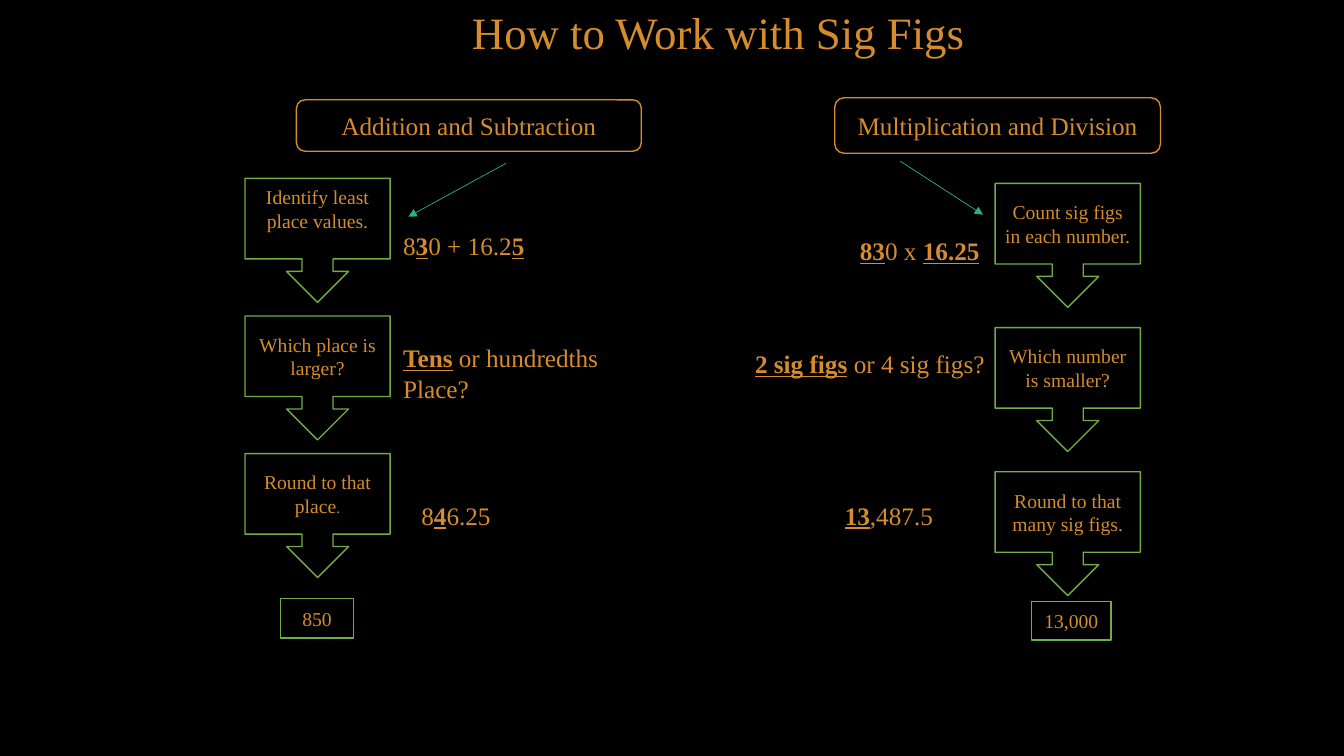
from lxml import etree
from pptx import Presentation
from pptx.dml.color import RGBColor
from pptx.enum import shapes, text
from pptx.oxml import ns
from pptx.util import Inches, Pt

FONT = "Times New Roman"
BLACK, ORANGE, GREEN, TEAL = "000000", "D58C2E", "70AD47", "29AF8C"
KEY, SMALL = "key", "small"  # key digits are bold and underlined

TITLE = "How to Work with Sig Figs"
STEP_WIDTH, STEP_HEIGHT = 1.44, 1.23

# A text is a list of lines, a line a list of (words, style) runs.
# Boxes are (left, top, width, height) in inches.
COLUMNS = [
    {
        "heading": ("Addition and Subtraction", (2.94, 0.99, 3.42, 0.51)),
        "arrow": (5.02, 1.62, 4.05, 2.15),
        "first_step": (2.43, 1.77),
        "pitch": 1.365,
        "steps": [
            [("Identify least place values.", None)],
            [("Which place is larger?", None)],
            [("Round to that place", None), (".", SMALL)],
        ],
        "first_step_lift": 0.2,
        "examples": [
            ((3.9, 2.24, 1.57, 0.4),
             [[("8", None), ("3", KEY), ("0 + 16.2", None), ("5", KEY)]]),
            ((3.9, 3.35, 2.43, 0.71),
             [[("Tens", KEY), (" or hundredths", None)], [("Place?", None)]]),
            ((4.08, 4.91, 1.58, 0.4),
             [[("8", None), ("4", KEY), ("6.25", None)]]),
        ],
        "answer": ("850", (2.78, 5.94, 0.73, 0.39)),
    },
    {
        "heading": ("Multiplication and Division", (8.28, 0.97, 3.23, 0.55)),
        "arrow": (8.93, 1.6, 9.75, 2.13),
        "first_step": (9.87, 1.82),
        "pitch": 1.43,
        "steps": [
            [("Count sig figs in each number.", None)],
            [("Which number is smaller?", None)],
            [("Round to that many sig figs.", None)],
        ],
        "first_step_lift": 0,
        "examples": [
            ((8.43, 2.29, 1.41, 0.4),
             [[("83", KEY), ("0 x ", None), ("16.25", KEY)]]),
            ((7.39, 3.41, 2.48, 0.4),
             [[("2 sig figs", KEY), (" or 4 sig figs?", None)]]),
            ((8.28, 4.91, 1.45, 0.4),
             [[("13", KEY), (",487.5", None)]]),
        ],
        "answer": ("13,000", (10.23, 5.97, 0.79, 0.38)),
    },
]


def color(hex_string):
    return RGBColor.from_string(hex_string)


def write(shape, lines, size, align, anchor):
    frame = shape.text_frame
    frame.word_wrap = True
    frame.vertical_anchor = anchor
    for index, line in enumerate(lines):
        paragraph = frame.add_paragraph() if index else frame.paragraphs[0]
        paragraph.alignment = align
        paragraph.font.name = FONT
        paragraph.font.size = Pt(size)
        paragraph.font.color.rgb = color(ORANGE)
        for words, style in line:
            run = paragraph.add_run()
            run.text = words
            if style == KEY:
                run.font.bold = run.font.underline = True
            elif style == SMALL:
                run.font.size = Pt(11)


def add_box(slide, kind, box, line_color, line, size):
    """Add an outlined black shape with one centred paragraph."""
    shape = slide.shapes.add_shape(kind, *map(Inches, box))
    shape.shadow.inherit = False
    shape.fill.solid()
    shape.fill.fore_color.rgb = color(BLACK)
    shape.line.color.rgb = color(line_color)
    shape.line.width = Pt(1)
    write(shape, [line], size, text.PP_ALIGN.CENTER, text.MSO_ANCHOR.MIDDLE)
    return shape


def add_arrow(slide, ends):
    arrow = slide.shapes.add_connector(
        shapes.MSO_CONNECTOR.STRAIGHT, *map(Inches, ends))
    arrow.line.color.rgb = color(TEAL)
    arrow.line.width = Pt(0.5)
    etree.SubElement(arrow.line._get_or_add_ln(), ns.qn("a:tailEnd"), type="triangle")
    etree.SubElement(arrow._element.spPr, ns.qn("a:effectLst"))


def add_column(slide, column):
    kinds = shapes.MSO_SHAPE
    heading, heading_box = column["heading"]
    add_box(slide, kinds.FLOWCHART_ALTERNATE_PROCESS, heading_box, ORANGE,
            [(heading, None)], 18)
    add_arrow(slide, column["arrow"])

    left, top = column["first_step"]
    for index, line in enumerate(column["steps"]):
        box = (left, top + index * column["pitch"], STEP_WIDTH, STEP_HEIGHT)
        step = add_box(slide, kinds.DOWN_ARROW_CALLOUT, box, GREEN, line, 14)
        if index == 0:
            step.text_frame.margin_bottom = Inches(0.05 + column["first_step_lift"])

    for box, lines in column["examples"]:
        example = slide.shapes.add_textbox(*map(Inches, box))
        write(example, lines, 18, text.PP_ALIGN.LEFT, text.MSO_ANCHOR.TOP)

    answer, answer_box = column["answer"]
    add_box(slide, kinds.RECTANGLE, answer_box, GREEN, [(answer, None)], 14)


def main():
    presentation = Presentation()
    presentation.slide_width = Inches(13.33)
    presentation.slide_height = Inches(7.5)
    slide = presentation.slides.add_slide(presentation.slide_layouts[5])
    slide.background.fill.solid()
    slide.background.fill.fore_color.rgb = color(BLACK)

    title = slide.shapes.title
    title.left, title.top, title.width, title.height = map(
        Inches, (4.56, 0, 5.13, 0.62))
    write(title, [[(TITLE, None)]], 32, text.PP_ALIGN.CENTER, text.MSO_ANCHOR.MIDDLE)

    for column in COLUMNS:
        add_column(slide, column)
    presentation.save("out.pptx")


if __name__ == "__main__":
    main()
